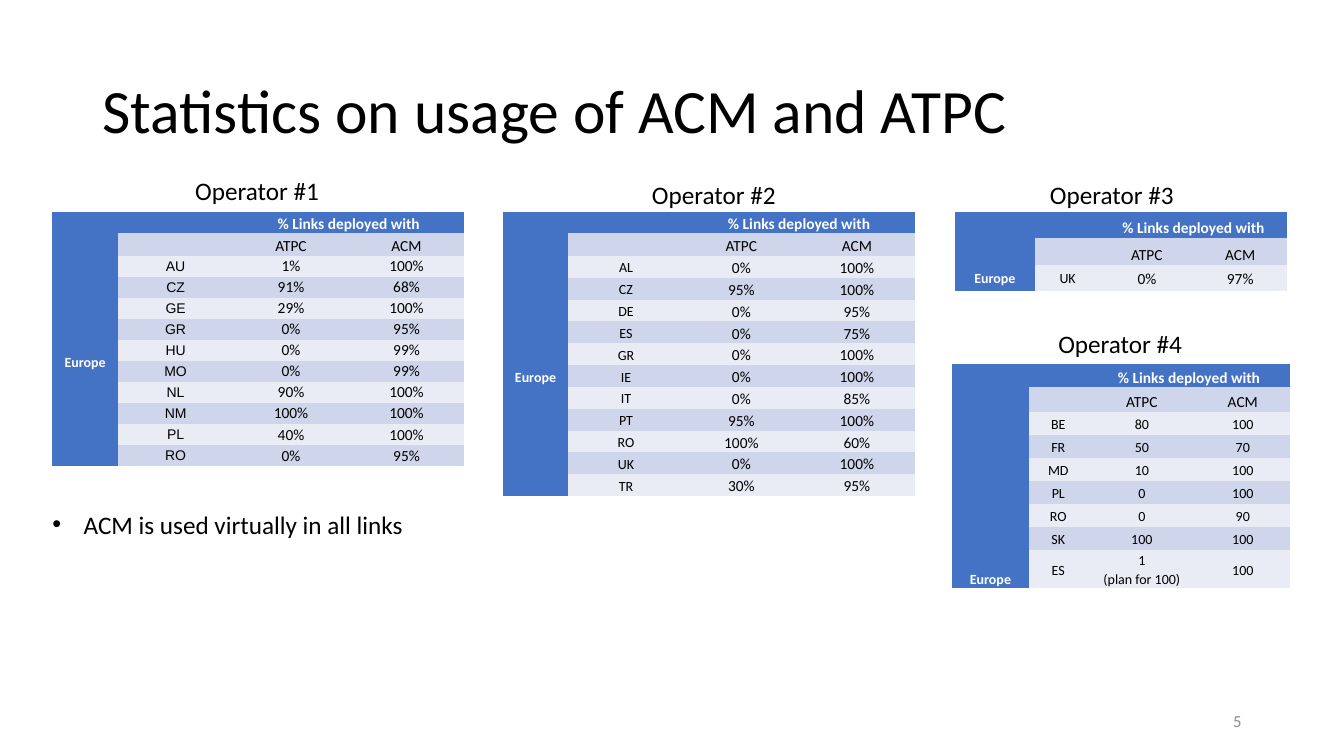
from dataclasses import dataclass

import pptx
import pptx.dml.color
import pptx.enum.text
import pptx.oxml.ns
import pptx.util
from lxml import etree
from pptx.util import Cm

COLORS = {
    "header": "4472C4",
    "band_dark": "CFD5EA",
    "band_light": "E9EBF5",
    "ink": "000000",
    "white": "FFFFFF",
    "number": "8C8C8C",
}
ALIGN = pptx.enum.text.PP_ALIGN
ANCHOR = pptx.enum.text.MSO_ANCHOR
qn = pptx.oxml.ns.qn


@dataclass
class Operator:
    name: str
    label_at: tuple[float, float]
    table_at: tuple[float, float]
    columns: tuple[float, ...]
    row_heights: tuple[float, float, float]  # heading, subheading, country
    links: list[tuple[str, str, str]]
    region_row: int = 2
    region_anchor: ANCHOR = ANCHOR.MIDDLE
    country_font: str = "Calibri"
    value_size: int = 11
    line_spacing: float = 1.15


WIDE = (1.65, 2.91, 2.91, 2.91)
OPERATORS = [
    Operator("Operator #1", (4.67, 4.29), (1.32, 5.33), WIDE, (0.55, 0.57, 0.53), [
        ("AU", "1%", "100%"), ("CZ", "91%", "68%"), ("GE", "29%", "100%"),
        ("GR", "0%", "95%"), ("HU", "0%", "99%"), ("MO", "0%", "99%"),
        ("NL", "90%", "100%"), ("NM", "100%", "100%"), ("PL", "40%", "100%"),
        ("RO", "0%", "95%"),
    ], country_font="Arial", line_spacing=1.0),
    Operator("Operator #2", (16.18, 4.39), (12.67, 5.33), WIDE, (0.55, 0.57, 0.55), [
        ("AL", "0%", "100%"), ("CZ", "95%", "100%"), ("DE", "0%", "95%"),
        ("ES", "0%", "75%"), ("GR", "0%", "100%"), ("IE", "0%", "100%"),
        ("IT", "0%", "85%"), ("PT", "95%", "100%"), ("RO", "100%", "60%"),
        ("UK", "0%", "100%"), ("TR", "30%", "95%"),
    ]),
    Operator("Operator #3", (26.21, 4.39), (24.06, 5.33), (2.02, 1.65, 2.35, 2.35),
             (0.66, 0.68, 0.66), [("UK", "0%", "97%")]),
    Operator("Operator #4", (26.42, 8.15), (24, 9.16), (1.92, 1.5, 2.71, 2.38),
             (0.6, 0.61, 0.58), [
        ("BE", "80", "100"), ("FR", "50", "70"), ("MD", "10", "100"),
        ("PL", "0", "100"), ("RO", "0", "90"), ("SK", "100", "100"),
        ("ES", "1\n(plan for 100)", "100"),
    ], region_row=0, region_anchor=ANCHOR.BOTTOM, value_size=10),
]


def style_text(paragraph, size: float, color: str = "ink", font: str = "Calibri",
               bold: bool = False) -> None:
    for run in paragraph.runs:
        run.font.size = pptx.util.Pt(size)
        run.font.name = font
        run.font.bold = bold
        run.font.color.rgb = pptx.dml.color.RGBColor.from_string(COLORS[color])


def add_text(slide, text: str, left: float, top: float, width: float, height: float,
             size: float, color: str = "ink", align: ALIGN = ALIGN.LEFT,
             anchor: ANCHOR = ANCHOR.TOP, wrap: bool = True):
    box = slide.shapes.add_textbox(Cm(left), Cm(top), Cm(width), Cm(height))
    frame = box.text_frame
    frame.word_wrap = wrap
    frame.vertical_anchor = anchor
    frame.text = text
    paragraph = frame.paragraphs[0]
    paragraph.alignment = align
    style_text(paragraph, size, color)
    return paragraph


def fill_cell(cell, text: str, fill: str, size: float, color: str = "ink",
              font: str = "Calibri", bold: bool = False,
              anchor: ANCHOR = ANCHOR.MIDDLE, spacing: float = 1.15) -> None:
    cell.margin_left = cell.margin_right = Cm(0.18)
    cell.margin_top = cell.margin_bottom = 0
    cell.vertical_anchor = anchor
    # Borderless cell; the border elements must precede the fill
    properties = cell._tc.get_or_add_tcPr()
    for side in ("a:lnL", "a:lnR", "a:lnT", "a:lnB"):
        etree.SubElement(etree.SubElement(properties, qn(side)), qn("a:noFill"))
    cell.fill.solid()
    cell.fill.fore_color.rgb = pptx.dml.color.RGBColor.from_string(COLORS[fill])

    paragraph = cell.text_frame.paragraphs[0]
    paragraph.text = text
    paragraph.alignment = ALIGN.CENTER
    paragraph.line_spacing = spacing
    style_text(paragraph, size, color, font, bold)
    # Line breaks and empty cells need the size too, or rows grow
    points = str(size * 100)
    for line_break in paragraph._p.findall(qn("a:br")):
        etree.SubElement(line_break, qn("a:rPr"), sz=points)
    if not text:
        etree.SubElement(paragraph._p, qn("a:endParaRPr"), sz=points)


def add_operator(slide, operator: Operator) -> None:
    add_text(slide, operator.name, *operator.label_at, 3.66, 1.02, 18, wrap=False)

    heading, subheading, country_height = operator.row_heights
    heights = [heading, subheading] + [country_height] * len(operator.links)
    frame = slide.shapes.add_table(
        len(heights), 4, *map(Cm, operator.table_at),
        Cm(sum(operator.columns)), Cm(sum(heights)))
    table = frame.table
    for column, width in zip(table.columns, operator.columns):
        column.width = Cm(width)
    for row, height in zip(table.rows, heights):
        row.height = Cm(height)

    # Region column
    for row in range(len(heights)):
        fill_cell(table.cell(row, 0), "Europe" if row == operator.region_row else "",
                  "header", 10, "white", bold=True, anchor=operator.region_anchor)

    # Heading and subheading
    for column, title in enumerate(("", "% Links deployed with", ""), 1):
        fill_cell(table.cell(0, column), title, "header", 11, "white", bold=True,
                  anchor=ANCHOR.BOTTOM)
    for column, title in enumerate(("", "ATPC", "ACM"), 1):
        fill_cell(table.cell(1, column), title, "band_dark", 11, anchor=ANCHOR.BOTTOM)

    # Countries
    for row, (country, *shares) in enumerate(operator.links, 2):
        band = "band_dark" if row % 2 else "band_light"
        fill_cell(table.cell(row, 1), country, band, 10, font=operator.country_font,
                  spacing=operator.line_spacing)
        for column, share in enumerate(shares, 2):
            fill_cell(table.cell(row, column), share, band, operator.value_size,
                      spacing=operator.line_spacing)

    # Merged cells
    table.cell(0, 2).merge(table.cell(0, 3))
    last_row = len(heights) - 1
    if operator.region_row < last_row:
        table.cell(operator.region_row, 0).merge(table.cell(last_row, 0))


def main() -> None:
    presentation = pptx.Presentation()
    presentation.slide_width = Cm(33.87)
    presentation.slide_height = Cm(19.05)
    slide = presentation.slides.add_slide(presentation.slide_layouts[6])

    # Title
    title = add_text(slide, "Statistics on usage of ACM and ATPC",
                     2.33, 1.01, 29.21, 3.68, 44, anchor=ANCHOR.MIDDLE)
    title.line_spacing = 0.9

    # Operator tables
    for operator in OPERATORS:
        add_operator(slide, operator)

    # Conclusion
    conclusion = add_text(slide, "ACM is used virtually in all links",
                          1.07, 12.7, 31.37, 1.8, 18)
    indents = conclusion._p.get_or_add_pPr()
    indents.set("marL", str(Cm(0.79)))
    indents.set("indent", str(-Cm(0.79)))
    etree.SubElement(indents, qn("a:buFont"), typeface="Arial")
    etree.SubElement(indents, qn("a:buChar"), char="•")

    # Slide number
    add_text(slide, "5", 23.92, 17.66, 7.62, 1.01, 12, "number", ALIGN.RIGHT,
             ANCHOR.MIDDLE)

    presentation.save("out.pptx")


if __name__ == "__main__":
    main()
